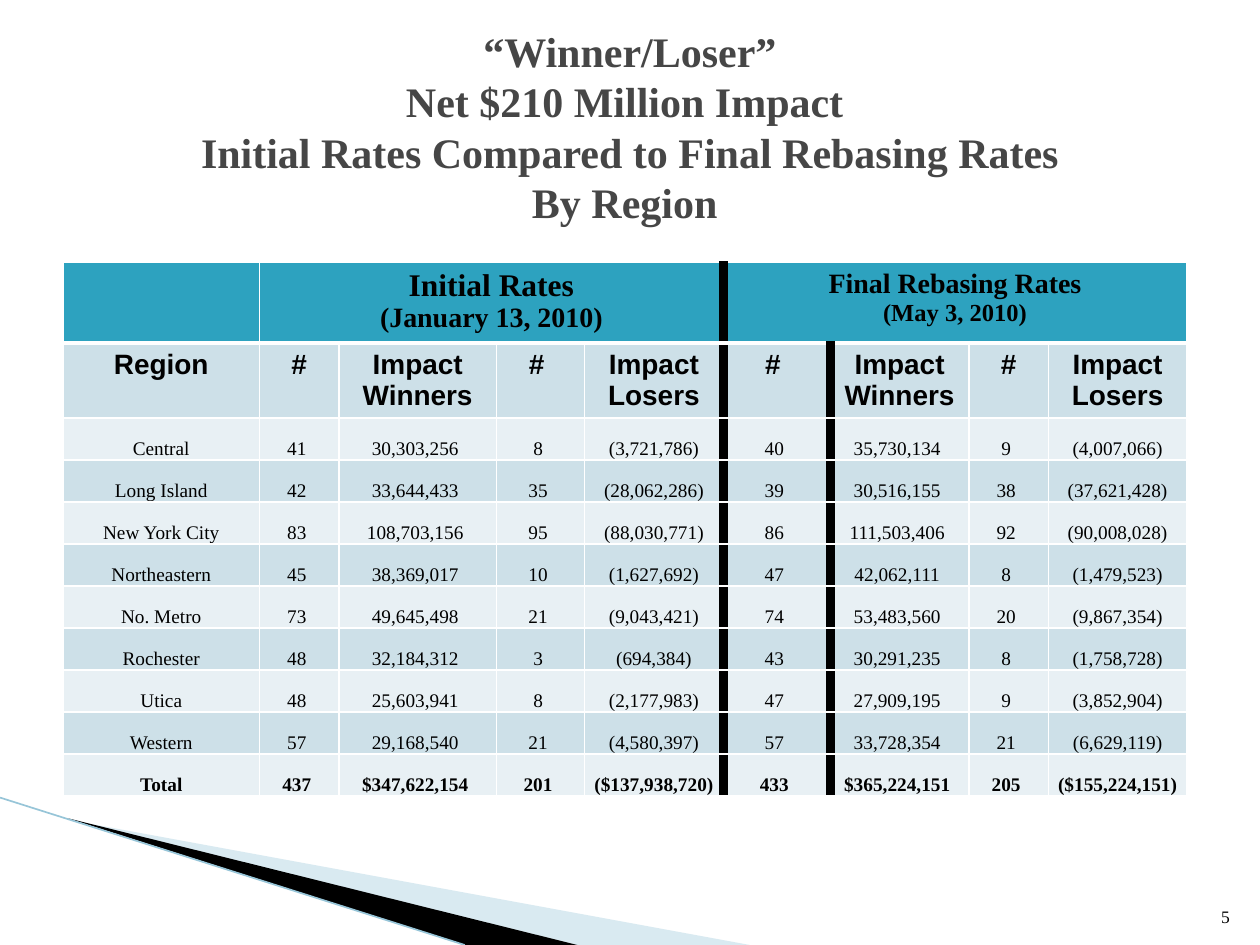
import collections
import pptx
import pptx.util
import pptx.dml.color
import pptx.enum.shapes
import pptx.enum.text
import pptx.oxml.ns
import lxml.etree

WIDE, HIGH = pptx.util.Inches(10), pptx.util.Inches(7.5)
Box = collections.namedtuple("Box", "x y w h")
Theme = collections.namedtuple(
    "Theme", "serif sans ink title head band pale white wedge rim huge big mid small body tiny")
LOOK = Theme(
    serif="Times New Roman", sans="Arial", ink="000000", title="464646",
    head="2DA2BF", band="CDE0E8", pale="E8F0F4", white="FFFFFF",
    wedge="A0CBDC", rim="97C5D8", huge=24, big=18, mid=16, small=14, body=11, tiny=10)

COLS = [1.56, 0.63, 1.25, 0.7, 1.1, 0.85, 1.1, 0.63, 1.1]
ROWS = [0.64, 0.58] + [0.33] * 9
TITLE = ("“Winner/Loser”\vNet $210 Million Impact \v"
         "Initial Rates Compared to Final Rebasing Rates\vBy Region ")
HEADS = ["Region", "#", "Impact Winners", "# ", "Impact Losers",
         "# ", "Impact Winners", "#", "Impact Losers"]
GROUPS = {
    1: [("Initial Rates", LOOK.big), ("(January 13, 2010)", LOOK.mid)],
    5: [("Final Rebasing Rates", LOOK.mid), ("(May 3, 2010)", LOOK.small)],
}
DATA = [
    ["Central", "41", "30,303,256", "8", "(3,721,786)", "40", "35,730,134", "9", "(4,007,066)"],
    ["Long Island", "42", "33,644,433", "35", "(28,062,286)", "39", "30,516,155", "38", "(37,621,428)"],
    ["New York City", "83", "108,703,156", "95", "(88,030,771)", "86", "111,503,406", "92", "(90,008,028)"],
    ["Northeastern", "45", "38,369,017", "10", "(1,627,692)", "47", "42,062,111", "8", "(1,479,523)"],
    ["No. Metro", "73", "49,645,498", "21", "(9,043,421)", "74", "53,483,560", "20", "(9,867,354)"],
    ["Rochester", "48", "32,184,312", "3", "(694,384)", "43", "30,291,235", "8", "(1,758,728)"],
    ["Utica", "48", "25,603,941", "8", "(2,177,983)", "47", "27,909,195", "9", "(3,852,904)"],
    ["Western", "57", "29,168,540", "21", "(4,580,397)", "57", "33,728,354", "21", "(6,629,119)"],
    ["Total", "437", "$347,622,154", "201", "($137,938,720)", "433", "$365,224,151", "205", "($155,224,151)"],
]


def area(x, y, w, h):
    return Box(int(x * WIDE), int(y * HIGH), int(w * WIDE), int(h * HIGH))


def tint(code):
    return pptx.dml.color.RGBColor.from_string(code)


def node(host, tag, **attrs):
    return lxml.etree.SubElement(host, pptx.oxml.ns.qn(tag), **attrs)


def write(frame, text, size=LOOK.body, font=LOOK.serif, color=LOOK.ink,
          bold=False, align="CENTER", pitch=None, fresh=True):
    para = frame.paragraphs[0] if fresh else frame.add_paragraph()
    para.text = text
    para.alignment = getattr(pptx.enum.text.PP_ALIGN, align)
    if pitch:
        para.line_spacing = pptx.util.Pt(pitch)
    para.font.size = pptx.util.Pt(size)
    para.font.name = font
    para.font.bold = bold
    para.font.color.rgb = tint(color)


def label(slide, box, text, anchor, **form):
    frame = slide.shapes.add_textbox(*box).text_frame
    frame.word_wrap = True
    frame.vertical_anchor = getattr(pptx.enum.text.MSO_ANCHOR, anchor)
    write(frame, text, **form)


def wedge(slide, box, spots, color, alpha=None):
    (x, y), *rest = [(box.x + a * box.w, box.y + b * box.h) for a, b in spots]
    pen = slide.shapes.build_freeform(int(x), int(y))
    pen.add_line_segments([(int(a), int(b)) for a, b in rest])
    form = pen.convert_to_shape()
    form.shadow.inherit = False
    form.fill.solid()
    form.fill.fore_color.rgb = tint(color)
    form.line.fill.background()
    if alpha:
        hue = form.fill._xPr.find(".//" + pptx.oxml.ns.qn("a:srgbClr"))
        node(hue, "a:alpha", val=str(alpha * 1000))


def sweep(slide, box):
    wedge(slide, box, [(0.09, 0.15), (1, 1), (0.77, 1)], LOOK.wedge, 40)
    wedge(slide, box, [(0.09, 0.14), (0.77, 1), (0.62, 1)], LOOK.ink)
    rim = slide.shapes.add_connector(
        pptx.enum.shapes.MSO_CONNECTOR.STRAIGHT,
        box.x, box.y, box.x + int(0.62 * box.w), box.y + box.h)
    rim.line.color.rgb = tint(LOOK.rim)
    rim.line.width = pptx.util.Pt(0.95)
    node(rim._element.spPr, "a:effectLst")


def edge(cell, side, color, width):
    line = node(cell._tc.get_or_add_tcPr(), "a:ln" + side, w=str(pptx.util.Pt(width)))
    node(node(line, "a:solidFill"), "a:srgbClr", val=color)


def upright(row, col):
    thick = col == 5 or (col == 6 and row > 0)
    return (LOOK.ink, 6) if thick else (LOOK.white, 1)


def level(row):
    return LOOK.white, 3 if row == 1 else 1


def paint(cell, row, col):
    edge(cell, "L", *upright(row, col))
    edge(cell, "R", *upright(row, col + 1))
    edge(cell, "T", *level(row))
    edge(cell, "B", *level(row + 1))
    cell.fill.solid()
    shade = LOOK.head if row == 0 else (LOOK.pale, LOOK.band)[row % 2]
    cell.fill.fore_color.rgb = tint(shade)


def enter(cell, row, col):
    if row == 0:
        for turn, (text, size) in enumerate(GROUPS.get(col, [])):
            write(cell.text_frame, text, size=size, bold=True, fresh=turn == 0)
    elif row == 1:
        write(cell.text_frame, HEADS[col], size=LOOK.mid, font=LOOK.sans, bold=True)
    else:
        text = DATA[row - 2][col]
        cell.margin_left = cell.margin_right = cell.margin_top = pptx.util.Inches(0.01)
        cell.margin_bottom = 0
        cell.vertical_anchor = pptx.enum.text.MSO_ANCHOR.BOTTOM
        tail = "" if col in (0, 4, 8) else " "
        write(cell.text_frame, text + tail, bold=row == len(ROWS) - 1)


def grid(slide, box):
    table = slide.shapes.add_table(len(ROWS), len(COLS), *box).table
    table.first_row = table.horz_banding = False
    for col, part in zip(table.columns, COLS):
        col.width = int(box.w * part / sum(COLS))
    for row, part in zip(table.rows, ROWS):
        row.height = int(box.h * part / sum(ROWS))
    for row in range(len(ROWS)):
        for col in range(len(COLS)):
            cell = table.cell(row, col)
            paint(cell, row, col)
            enter(cell, row, col)
    for col in GROUPS:
        table.cell(0, col).merge(table.cell(0, col + 3))


def main():
    deck = pptx.Presentation()
    deck.slide_width, deck.slide_height = WIDE, HIGH
    slide = deck.slides.add_slide(deck.slide_layouts[6])
    sweep(slide, area(0, 0.844, 0.595, 0.156))
    grid(slide, area(0.05, 0.277, 0.892, 0.564))
    label(slide, area(0.946, 0.935, 0.04, 0.053), "5", "BOTTOM",
          size=LOOK.tiny, align="RIGHT")
    label(slide, area(0.05, 0.067, 0.9, 0.133), TITLE, "MIDDLE",
          size=LOOK.huge, color=LOOK.title, bold=True, pitch=28.8)
    deck.save("out.pptx")


if __name__ == "__main__":
    main()
